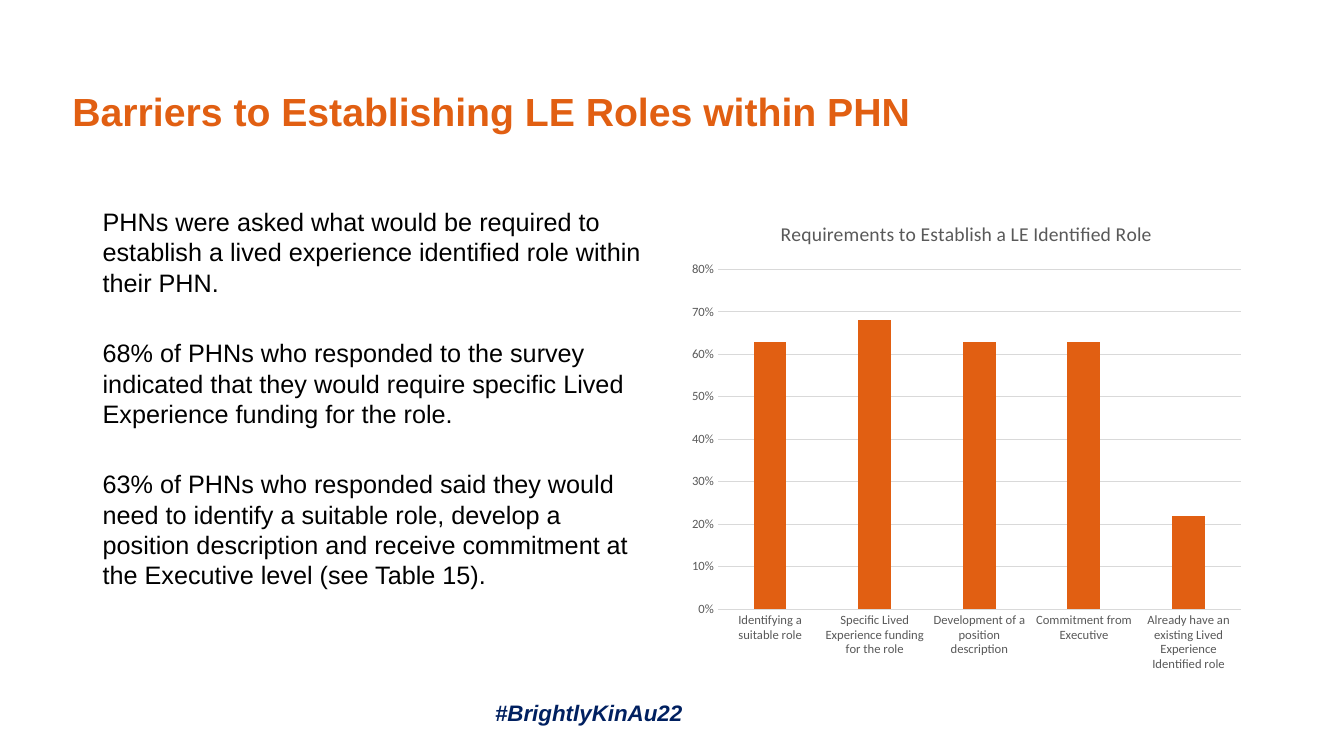
from dataclasses import dataclass

from pptx import Presentation
from pptx.chart.axis import CategoryAxis, ValueAxis
from pptx.chart.data import CategoryChartData
from pptx.dml.color import RGBColor
from pptx.enum.chart import XL_CHART_TYPE, XL_TICK_MARK
from pptx.enum.text import MSO_ANCHOR
from pptx.slide import Slide
from pptx.text.text import Font
from pptx.util import Inches, Pt


@dataclass(frozen=True)
class Theme:
    orange: RGBColor = RGBColor(0xE1, 0x5F, 0x12)
    navy: RGBColor = RGBColor(0x00, 0x20, 0x60)
    black: RGBColor = RGBColor(0x00, 0x00, 0x00)
    gray: RGBColor = RGBColor(0x59, 0x59, 0x59)
    grid: RGBColor = RGBColor(0xD9, 0xD9, 0xD9)
    text_font: str = "Arial"
    chart_font: str = "Calibri"
    title_size: float = 28
    body_size: float = 18
    hashtag_size: float = 16
    chart_title_size: float = 14
    chart_size: float = 10
    axis_size: float = 9


@dataclass(frozen=True)
class TextBlock:
    left: float
    top: float
    width: float
    height: float
    paragraphs: tuple[str, ...]
    size: float
    color: RGBColor
    bold: bool = False
    italic: bool = False
    anchor: MSO_ANCHOR = MSO_ANCHOR.TOP
    inset_left: float = 0.1
    inset_top: float = 0.05
    line_points: float | None = None
    gap_points: float = 0


THEME = Theme()

TEXT_BLOCKS = (
    TextBlock(
        0.62, 0.74, 11.23, 0.71,
        ("Barriers to Establishing LE Roles within PHN",),
        THEME.title_size, THEME.orange, bold=True, anchor=MSO_ANCHOR.MIDDLE,
    ),
    TextBlock(
        0.92, 2, 5.67, 4.76,
        (
            "PHNs were asked what would be required to establish a lived experience "
            "identified role within their PHN.",
            "68% of PHNs who responded to the survey indicated that they would require "
            "specific Lived Experience funding for the role.",
            "63% of PHNs who responded said they would need to identify a suitable role, "
            "develop a position description and receive commitment at the Executive level "
            "(see Table 15).",
        ),
        THEME.body_size, THEME.black, line_points=21.6, gap_points=28.8,
    ),
    TextBlock(
        4.75, 6.86, 3.59, 0.27, ("#BrightlyKinAu22",),
        THEME.hashtag_size, THEME.navy, bold=True, italic=True,
        inset_left=0.16, inset_top=0.08,
    ),
)

REQUIREMENTS = {
    "Identifying a suitable role": 0.63,
    "Specific Lived Experience funding for the role": 0.68,
    "Development of a position description": 0.63,
    "Commitment from Executive": 0.63,
    "Already have an existing Lived Experience Identified role": 0.22,
}


def style_font(font: Font, name: str, size: float, color: RGBColor,
               bold: bool = False, italic: bool = False) -> None:
    font.name = name
    font.size = Pt(size)
    font.color.rgb = color
    font.bold = bold
    font.italic = italic


def add_text(page: Slide, block: TextBlock) -> None:
    box = page.shapes.add_textbox(
        Inches(block.left), Inches(block.top), Inches(block.width), Inches(block.height)
    )
    frame = box.text_frame
    frame.text = "\n".join(block.paragraphs)
    frame.word_wrap = True
    frame.vertical_anchor = block.anchor
    frame.margin_left = Inches(block.inset_left)
    frame.margin_top = Inches(block.inset_top)
    for index, para in enumerate(frame.paragraphs):
        if block.line_points:
            para.line_spacing = Pt(block.line_points)
        if index:
            para.space_before = Pt(block.gap_points)
        for span in para.runs:
            style_font(span.font, THEME.text_font, block.size, block.color,
                       block.bold, block.italic)


def style_axis(axis: CategoryAxis | ValueAxis) -> None:
    axis.major_tick_mark = XL_TICK_MARK.NONE
    axis.minor_tick_mark = XL_TICK_MARK.NONE
    style_font(axis.tick_labels.font, THEME.chart_font, THEME.axis_size, THEME.gray)


def add_requirements_chart(page: Slide) -> None:
    data = CategoryChartData(number_format="0%")
    data.categories = list(REQUIREMENTS)
    data.add_series("Series 1", list(REQUIREMENTS.values()))
    chart = page.shapes.add_chart(
        XL_CHART_TYPE.COLUMN_CLUSTERED,
        Inches(6.75), Inches(2), Inches(5.67), Inches(4.76), data,
    ).chart
    style_font(chart.font, THEME.chart_font, THEME.chart_size, THEME.black)
    chart.has_legend = False
    chart.has_title = True
    title = chart.chart_title.text_frame
    title.text = "Requirements to Establish a LE Identified Role"
    style_font(title.paragraphs[0].runs[0].font, THEME.chart_font,
               THEME.chart_title_size, THEME.gray)
    chart.chart_title.include_in_layout = False

    plot = chart.plots[0]
    plot.vary_by_categories = False
    plot.gap_width = 219
    plot.overlap = -27
    fill = plot.series[0].format.fill
    fill.solid()
    fill.fore_color.rgb = THEME.orange

    categories, values = chart.category_axis, chart.value_axis
    style_axis(categories)
    style_axis(values)
    values.minimum_scale = 0
    values.maximum_scale = 0.8
    values.major_unit = 0.1
    values.tick_labels.number_format = "0%"
    values.tick_labels.number_format_is_linked = False
    values.format.line.fill.background()
    for line in (categories.format.line, values.major_gridlines.format.line):
        line.color.rgb = THEME.grid
        line.width = Pt(0.75)


def main() -> None:
    deck = Presentation()
    deck.slide_width = Inches(13.33)
    deck.slide_height = Inches(7.5)
    page = deck.slides.add_slide(deck.slide_layouts[6])
    for block in TEXT_BLOCKS:
        add_text(page, block)
    add_requirements_chart(page)
    deck.save("out.pptx")


if __name__ == "__main__":
    main()
